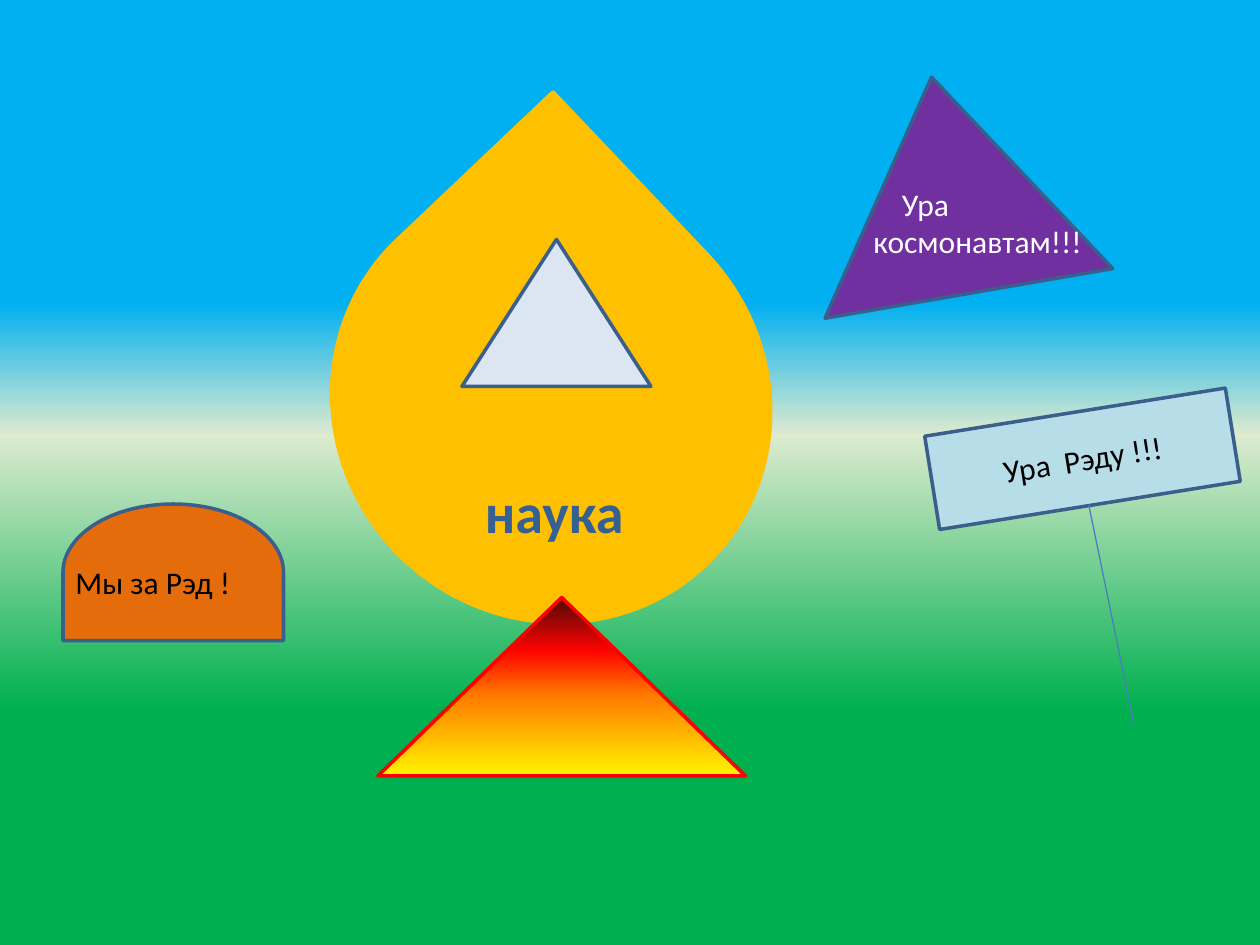
from lxml import etree
from pptx import Presentation, util as u
from pptx.dml.color import RGBColor
from pptx.enum import shapes, text
from pptx.oxml.ns import qn

# The slide is a grid of 120 columns by 90 rows
COLUMNS, ROWS = 120, 90
CELL = u.Inches(10) // COLUMNS
OUTLINE = "3A5F8C"
kinds = shapes.MSO_SHAPE


def paint(fill, colour, owner=None):
    """Fill with one hex colour, or with (percent, hex) stops rising from the bottom."""
    if isinstance(colour, str):
        fill.solid()
        fill.fore_color.rgb = RGBColor.from_string(colour)
        return
    fill.gradient()
    fill.gradient_angle = 90
    stops = owner.find(".//" + qn("a:gsLst"))
    for old in list(stops):
        stops.remove(old)
    for percent, shade in colour:
        stop = etree.SubElement(stops, qn("a:gs"), pos=str(percent * 1000))
        etree.SubElement(stop, qn("a:srgbClr"), val=shade)


def write(frame, words, size=18, colour="000000", bold=False, indent=0,
          align=text.PP_ALIGN.LEFT, anchor=text.MSO_ANCHOR.TOP):
    frame.word_wrap = True
    frame.vertical_anchor = anchor
    line = frame.paragraphs[0]
    line.alignment = align
    if indent:
        line._p.get_or_add_pPr().set("indent", str(int(indent * CELL)))
    run = line.add_run()
    run.text = words
    run.font.name, run.font.size, run.font.bold = "Calibri", u.Pt(size), bold
    paint(run.font.fill, colour)


deck = Presentation()
deck.slide_width, deck.slide_height = COLUMNS * CELL, ROWS * CELL
slide = deck.slides.add_slide(deck.slide_layouts[6])

# Sky above grass
paint(slide.background.fill,
      [(25, "00B050"), (54, "DDEBCF"), (68, "00B0F0")], slide._element)

# Rocket with flame and window, placard, dome and flag
flame = [(1, "FFF200"), (45, "FF7A00"), (70, "FF0300"), (100, "4D0808")]
figures = [
    (kinds.TEAR, (32, 17, 41, 42.7), 316.5, "FFC000", "FFC000"),
    (kinds.ISOSCELES_TRIANGLE, (36, 56.9, 35, 17), 0, flame, "FF0000"),
    (kinds.ISOSCELES_TRIANGLE, (44, 22.8, 18, 14), 0, "DCE6F2", OUTLINE),
    (kinds.FLOWCHART_DELAY, (10, 44, 13, 21), 270, "E46C0A", OUTLINE),
    (kinds.ISOSCELES_TRIANGLE, (76.6, 7.2, 27.8, 20.9), 350.2, "7030A0", OUTLINE),
    (kinds.RECTANGLE, (88.6, 39.2, 29, 9), 350.9, "B7DEE8", OUTLINE),
]
for kind, place, turn, colour, edge in figures:
    figure = slide.shapes.add_shape(kind, *(int(n * CELL) for n in place))
    figure.rotation = turn
    figure.shadow.inherit = False
    paint(figure.fill, colour, figure._element)
    paint(figure.line.fill, edge)
    figure.line.width = u.Pt(2)

# The placard comes last, and its words turn with it
placard = figure
write(placard.text_frame, "Ура  Рэду !!!",
      align=text.PP_ALIGN.CENTER, anchor=text.MSO_ANCHOR.MIDDLE)

# Placard stick
stick = slide.shapes.add_connector(
    shapes.MSO_CONNECTOR.STRAIGHT,
    *(int(n * CELL) for n in (103.7, 48.1, 108, 69)))
paint(stick.line.fill, "4B7EBC")
stick.line.width = u.Pt(0.75)
etree.SubElement(stick._element.spPr, qn("a:effectLst"))

# Words on the rocket, dome and flag
captions = [
    ("наука", (41, 44.9, 25, 7.7),
     dict(size=32, colour="376092", bold=True, indent=4)),
    ("Мы за Рэд !", (6, 53, 21, 4.8), {}),
    ("Ура космонавтам!!!", (82, 17, 26, 8.5), dict(colour="FFFFFF", indent=2.7)),
]
for words, place, style in captions:
    caption = slide.shapes.add_textbox(*(int(n * CELL) for n in place))
    write(caption.text_frame, words, **style)

deck.save("out.pptx")
